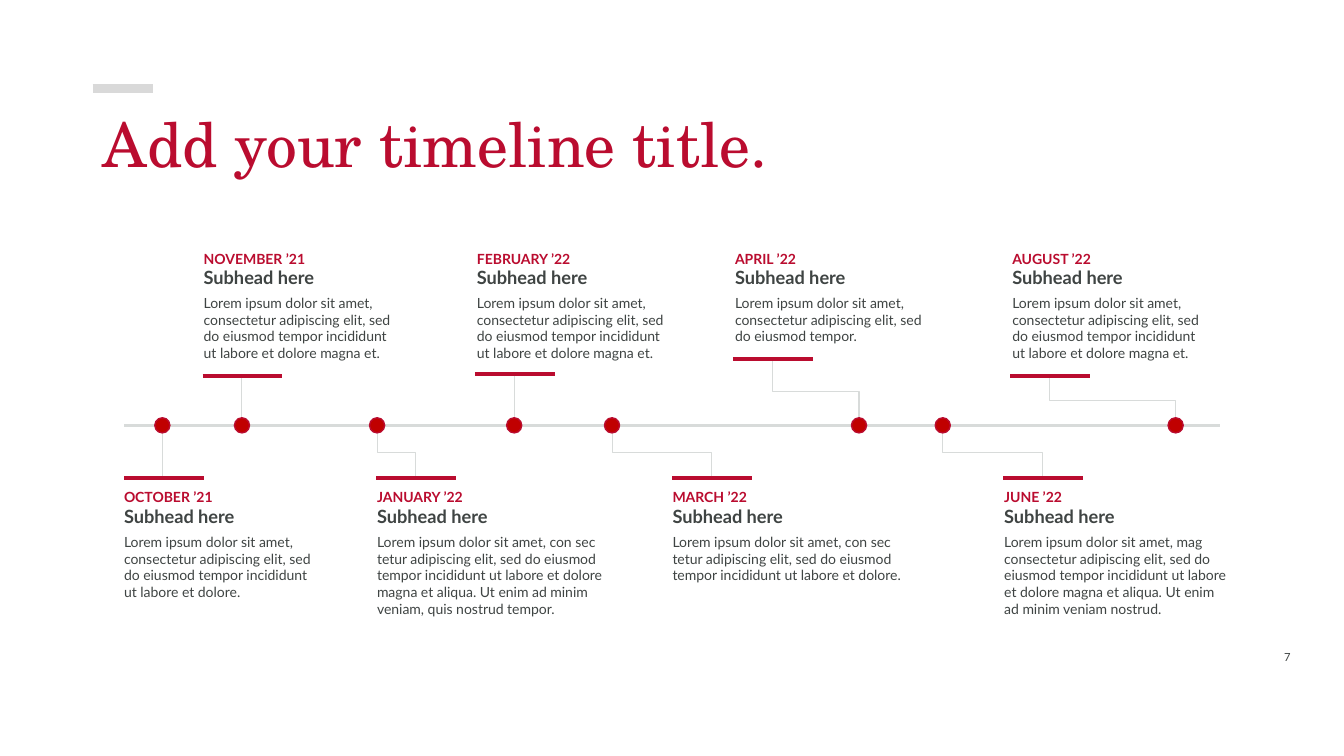
import pptx
import pptx.util
import pptx.dml.color
import pptx.enum.shapes
import pptx.enum.text
import pptx.oxml.ns
from lxml import etree

Inches = pptx.util.Inches
Pt = pptx.util.Pt
CONNECTOR = pptx.enum.shapes.MSO_CONNECTOR
ANCHOR = pptx.enum.text.MSO_ANCHOR
ALIGN = pptx.enum.text.PP_ALIGN

COLOURS = {
    "crimson": "BA0C2F",
    "dot": "C00000",
    "text": "3F4443",
    "axis": "D8DBDA",
    "accent": "D9D9D9",
}
FORMATS = {
    "title": {"size": Pt(44), "name": "TeX Gyre Schola", "bold": False},
    "date": {"size": Pt(10), "name": "Lato", "bold": True},
    "subhead": {"size": Pt(13), "name": "Lato", "bold": True},
    "body": {"size": Pt(10), "name": "Lato", "bold": False},
    "number": {"size": Pt(8), "name": "Lato", "bold": False},
}
AXIS_Y = 4.22
DOT_SIZE = 0.15
BAR_WIDTH = 0.79
STEM_OFFSET = 0.39
LOREM = "Lorem ipsum dolor sit amet, "
ELIT = "consectetur adipiscing elit, sed do eiusmod tempor"
SHORT = LOREM + ELIT
LABORE = SHORT + " incididunt ut labore et dolore"
SPLIT = LOREM + "con sec tetur adipiscing elit, sed do eiusmod tempor incididunt ut labore et dolore"
AD_MINIM = " magna et aliqua. Ut enim ad minim veniam"

MILESTONES = [
    # date, body, dot x, bar left, bar y, bend y, text left, body width
]
MILESTONES = [
    ("OCTOBER ’21", LABORE + ".", 1.61, 1.23, 4.74, None, 1.23, 1.92),
    ("NOVEMBER ’21", LABORE + " magna et.", 2.4, 2.01, 3.73, None, 2.02, 1.92),
    ("JANUARY ’22", SPLIT + AD_MINIM + ", quis nostrud tempor.",
     3.74, 3.73, 4.74, 4.49, 3.74, 2.33),
    ("FEBRUARY ’22", LABORE + " magna et.", 5.1, 4.71, 3.71, None, 4.73, 1.92),
    ("MARCH ’22", SPLIT + ".", 6.07, 6.67, 4.74, 4.49, 6.67, 2.39),
    ("APRIL ’22", SHORT + ".", 8.52, 7.27, 3.56, 3.88, 7.29, 1.92),
    ("JUNE ’22", LOREM + "mag " + ELIT + " incididunt ut labore et dolore"
     + AD_MINIM + " nostrud.", 9.35, 9.95, 4.74, 4.49, 9.96, 2.25),
    ("AUGUST ’22", LABORE + " magna et.", 11.66, 10.02, 3.73, 3.97, 10.04, 1.92),
]


def colour(name):
    return pptx.dml.color.RGBColor.from_string(COLOURS[name])


def write(shape, text, style, colour_name, spacing=None, align=ALIGN.LEFT):
    paragraph = shape.text_frame.paragraphs[0]
    paragraph.alignment = align
    paragraph.space_before = Pt(0)
    if spacing:
        paragraph.line_spacing = spacing
    run = paragraph.add_run()
    run.text = text
    for attribute, value in FORMATS[style].items():
        setattr(run.font, attribute, value)
    run.font.color.rgb = colour(colour_name)


def add_text(slide, box, text, style, colour_name, spacing=None):
    shape = slide.shapes.add_textbox(*map(Inches, box))
    frame_format = {"word_wrap": True, "margin_left": 0, "margin_top": 0,
                    "margin_right": 0, "margin_bottom": 0}
    for attribute, value in frame_format.items():
        setattr(shape.text_frame, attribute, value)
    write(shape, text, style, colour_name, spacing)


def add_line(shapes, start, end, colour_name, width, kind=CONNECTOR.STRAIGHT):
    connector = shapes.add_connector(kind, *map(Inches, start + end))
    connector.line.color.rgb = colour(colour_name)
    connector.line.width = Pt(width)
    etree.SubElement(connector._element.spPr, pptx.oxml.ns.qn("a:effectLst"))
    return connector


def add_elbow(shapes, start, end, bend_y):
    connector = add_line(shapes, start, end, "axis", 0.75, CONNECTOR.ELBOW)
    across, down = end[0] - start[0], end[1] - start[1]
    connector.left = Inches((start[0] + end[0] - down) / 2)
    connector.top = Inches((start[1] + end[1] - across) / 2)
    connector.width, connector.height = Inches(down), Inches(across)
    properties = connector._element.spPr
    transform = properties.find(pptx.oxml.ns.qn("a:xfrm"))
    transform.set("rot", "16200000")
    transform.set("flipH", "1")
    geometry = properties.find(pptx.oxml.ns.qn("a:prstGeom"))
    guides = geometry.find(pptx.oxml.ns.qn("a:avLst"))
    share = round((bend_y - start[1]) / down * 100000)
    etree.SubElement(guides, pptx.oxml.ns.qn("a:gd"), name="adj1", fmla=f"val {share}")


def add_dot(shapes, x):
    dot = shapes.add_shape(
        pptx.enum.shapes.MSO_SHAPE.OVAL, Inches(x - DOT_SIZE / 2),
        Inches(AXIS_Y - DOT_SIZE / 2), Inches(DOT_SIZE), Inches(DOT_SIZE))
    dot.shadow.inherit = False
    dot.fill.solid()
    dot.fill.fore_color.rgb = colour("dot")
    dot.line.color.rgb = colour("crimson")
    dot.line.width = Pt(1)


def add_marker(slide, dot_x, bar_left, bar_y, bend_y):
    shapes = slide.shapes.add_group_shape().shapes
    ends = sorted([(dot_x, AXIS_Y), (bar_left + STEM_OFFSET, bar_y)],
                  key=lambda point: point[1])
    if bend_y is None:
        add_line(shapes, (dot_x, ends[0][1]), (dot_x, ends[1][1]), "axis", 0.75)
    else:
        add_elbow(shapes, *ends, bend_y)
    add_line(shapes, (bar_left, bar_y), (bar_left + BAR_WIDTH, bar_y), "crimson", 3)
    add_dot(shapes, dot_x)


def add_milestone(slide, date, body, dot_x, bar_left, bar_y, bend_y, left, width):
    add_marker(slide, dot_x, bar_left, bar_y, bend_y)
    top = 2.5 if bar_y < AXIS_Y else 4.87
    add_text(slide, (left, top, 1.92, 0.16), date, "date", "crimson", 0.9)
    add_text(slide, (left, top + 0.17, 1.92, 0.25), "Subhead here", "subhead", "text", 0.9)
    add_text(slide, (left, top + 0.42, width, 0.74), body, "body", "text")


def add_title(slide, text):
    title = slide.shapes.title
    box = {"left": 0.92, "top": 1.08, "width": 11.5, "height": 0.92}
    for attribute, value in box.items():
        setattr(title, attribute, Inches(value))
    title.text_frame.vertical_anchor = ANCHOR.TOP
    write(title, text, "title", "crimson", 0.9)


def add_page_number(slide, text):
    shape = slide.shapes.add_textbox(*map(Inches, (12.36, 6.32, 0.54, 0.4)))
    shape.text_frame.word_wrap = True
    shape.text_frame.vertical_anchor = ANCHOR.MIDDLE
    write(shape, text, "number", "text", align=ALIGN.RIGHT)


def main():
    presentation = pptx.Presentation()
    presentation.slide_width = Inches(13.33)
    presentation.slide_height = Inches(7.5)
    slide = presentation.slides.add_slide(presentation.slide_layouts[5])
    add_line(slide.shapes, (0.92, 0.88), (1.52, 0.88), "accent", 6.25)
    add_title(slide, "Add your timeline title.")
    add_line(slide.shapes, (1.23, AXIS_Y), (12.1, AXIS_Y), "axis", 1.75)
    for milestone in MILESTONES:
        add_milestone(slide, *milestone)
    add_page_number(slide, "7")
    presentation.save("out.pptx")


if __name__ == "__main__":
    main()
